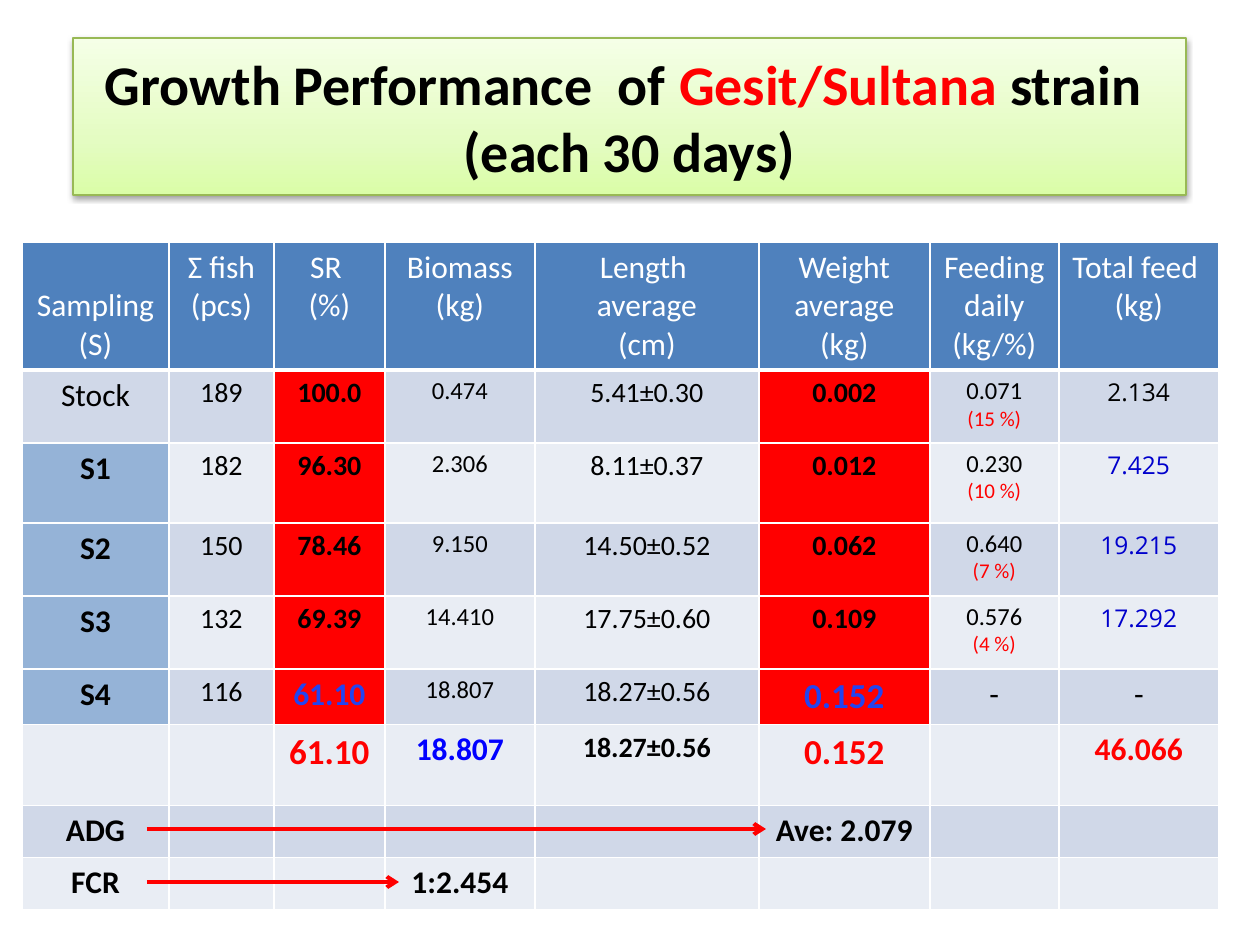
import pptx
import pptx.util
import pptx.dml.color
import pptx.enum.shapes
import pptx.enum.text
import pptx.oxml
import pptx.oxml.ns

SCALE = 914400 / 126
BLACK, WHITE, RED, BLUE = "000000", "FFFFFF", "FF0000", "0000CC"
NAMESPACE = pptx.oxml.ns.nsdecls("a")


def px(value):
    return pptx.util.Emu(round(value * SCALE))


def write(para, text, size=18, color=BLACK, bold=False, font="Calibri", spacing=None):
    para.alignment = pptx.enum.text.PP_ALIGN.CENTER
    if spacing:
        para.line_spacing = spacing
    span = para.add_run()
    span.text = text
    span.font.size = pptx.util.Pt(size)
    span.font.name = font
    span.font.bold = bold
    span.font.color.rgb = pptx.dml.color.RGBColor.from_string(color)


deck = pptx.Presentation()
deck.slide_width, deck.slide_height = px(1260), px(945)
page = deck.slides.add_slide(deck.slide_layouts[5])

title = page.shapes.title
title.left, title.top, title.width, title.height = px(73), px(38), px(1113), px(157)
title.line.color.rgb = pptx.dml.color.RGBColor.from_string("98B955")
title.line.width = pptx.util.Pt(0.75)
stops = "".join(
    f'<a:gs pos="{position}"><a:srgbClr val="{color}"/></a:gs>'
    for position, color in [(0, "DAFDA7"), (35000, "E4FCC2"), (100000, "F5FFE7")]
)
outline = title._element.spPr.find(pptx.oxml.ns.qn("a:ln"))
outline.addprevious(pptx.oxml.parse_xml(
    f'<a:gradFill {NAMESPACE} rotWithShape="1"><a:gsLst>{stops}</a:gsLst>'
    '<a:lin ang="16200000" scaled="0"/></a:gradFill>'
))
outline.addnext(pptx.oxml.parse_xml(
    f'<a:effectLst {NAMESPACE}><a:outerShdw blurRad="40000" dist="20000" dir="5400000" '
    'rotWithShape="0"><a:srgbClr val="000000"><a:alpha val="38000"/></a:srgbClr>'
    '</a:outerShdw></a:effectLst>'
))
frame = title.text_frame
frame.word_wrap = True
frame.auto_size = pptx.enum.text.MSO_AUTO_SIZE.NONE
frame.vertical_anchor = pptx.enum.text.MSO_ANCHOR.MIDDLE
for text, color in [
    ("Growth Performance  of ", BLACK),
    ("Gesit/Sultana ", RED),
    ("strain  (each 30 days)", BLACK),
]:
    write(frame.paragraphs[0], text, size=32, color=color, bold=True)

rows = [
    ["Sampling\n(S)", "Ʃ fish\n(pcs)", "SR \n(%)", "Biomass\n(kg)", "Length \naverage\n(cm)",
     "Weight average\n(kg)", "Feeding\ndaily\n(kg/%)", "Total feed \n(kg)"],
    ["Stock", "189", "100.0", "0.474", "5.41±0.30", "0.002", "0.071\n(15 %)", "2.134"],
    ["S1", "182", "96.30", "2.306", "8.11±0.37", "0.012", "0.230\n(10 %)", "7.425"],
    ["S2", "150", "78.46", "9.150", "14.50±0.52", "0.062", "0.640\n(7 %)", "19.215"],
    ["S3", "132", "69.39", "14.410", "17.75±0.60", "0.109", "0.576\n(4 %)", "17.292"],
    ["S4", "116", "61.10", "18.807", "18.27±0.56", "0.152", "-", "-"],
    ["", "", "61.10", "18.807", "18.27±0.56", "0.152", "", "46.066"],
    ["ADG", "", "", "", "", "Ave: 2.079", "", ""],
    ["FCR", "", "", "1:2.454", "", "", "", ""],
]
widths = [147, 105, 111, 150, 224, 171, 129, 160]
heights = [128, 73, 80, 73, 73, 55, 81, 52, 52]
column_formats = [
    dict(bold=True),
    dict(size=16),
    dict(size=16, bold=True),
    dict(size=14),
    dict(size=16),
    dict(size=16, bold=True),
    dict(size=14),
    dict(size=14, color=BLUE, font="Open Sans", spacing=1.15),
]
special_formats = {
    (1, 0): dict(),
    (1, 7): dict(size=14, font="Open Sans", spacing=1.15),
    (5, 2): dict(color="2244F0", bold=True),
    (5, 5): dict(size=20, color="2244F0", bold=True),
    (5, 6): dict(),
    (5, 7): dict(),
    (6, 2): dict(size=20, color=RED, bold=True),
    (6, 3): dict(color="0000FF", bold=True),
    (6, 4): dict(size=16, bold=True),
    (6, 5): dict(size=20, color=RED, bold=True),
    (6, 7): dict(color=RED, bold=True),
    (7, 5): dict(bold=True, spacing=1.15),
    (8, 3): dict(bold=True),
}

table = page.shapes.add_table(
    len(rows), len(widths), px(22), px(242), px(sum(widths)), px(sum(heights))
).table
for column, width in zip(table.columns, widths):
    column.width = px(width)
for line, height in zip(table.rows, heights):
    line.height = px(height)

for r, row in enumerate(rows):
    for c, text in enumerate(row):
        cell = table.cell(r, c)
        properties = cell._tc.get_or_add_tcPr()
        for side in "LRTB":
            thick = (r, side) in [(0, "B"), (1, "T")]
            properties.append(pptx.oxml.parse_xml(
                f'<a:ln{side} {NAMESPACE} w="{38100 if thick else 12700}"><a:solidFill>'
                f'<a:srgbClr val="{WHITE}"/></a:solidFill></a:ln{side}>'
            ))
        if r == 0:
            fill, style = "4F81BD", dict(color=WHITE)
        else:
            fill = "D0D8E8" if r % 2 else "E9EDF4"
            style = special_formats.get((r, c), column_formats[c])
            if c in (2, 5) and r <= 5:
                fill = RED
            elif c == 0 and 2 <= r <= 5:
                fill = "95B3D7"
        cell.fill.solid()
        cell.fill.fore_color.rgb = pptx.dml.color.RGBColor.from_string(fill)
        if "spacing" in style:
            cell.margin_left = cell.margin_right = px(9)
            cell.margin_top = cell.margin_bottom = 0
        if not text:
            continue
        for number, part in enumerate(text.split("\n")):
            para = cell.text_frame.add_paragraph() if number else cell.text_frame.paragraphs[0]
            if r and number:
                write(para, part, size=12, color=RED)
            else:
                write(para, part, **style)
table.cell(0, 0).vertical_anchor = pptx.enum.text.MSO_ANCHOR.BOTTOM

for end, y in [(766, 829), (399, 882)]:
    arrow = page.shapes.add_connector(
        pptx.enum.shapes.MSO_CONNECTOR.STRAIGHT, px(147), px(y), px(end), px(y)
    )
    arrow.line.color.rgb = pptx.dml.color.RGBColor.from_string(RED)
    arrow.line.width = pptx.util.Pt(2.25)
    arrow.line._get_or_add_ln().append(
        pptx.oxml.parse_xml(f'<a:tailEnd {NAMESPACE} type="arrow"/>')
    )
    arrow._element.spPr.append(pptx.oxml.parse_xml(f"<a:effectLst {NAMESPACE}/>"))

deck.save("out.pptx")
